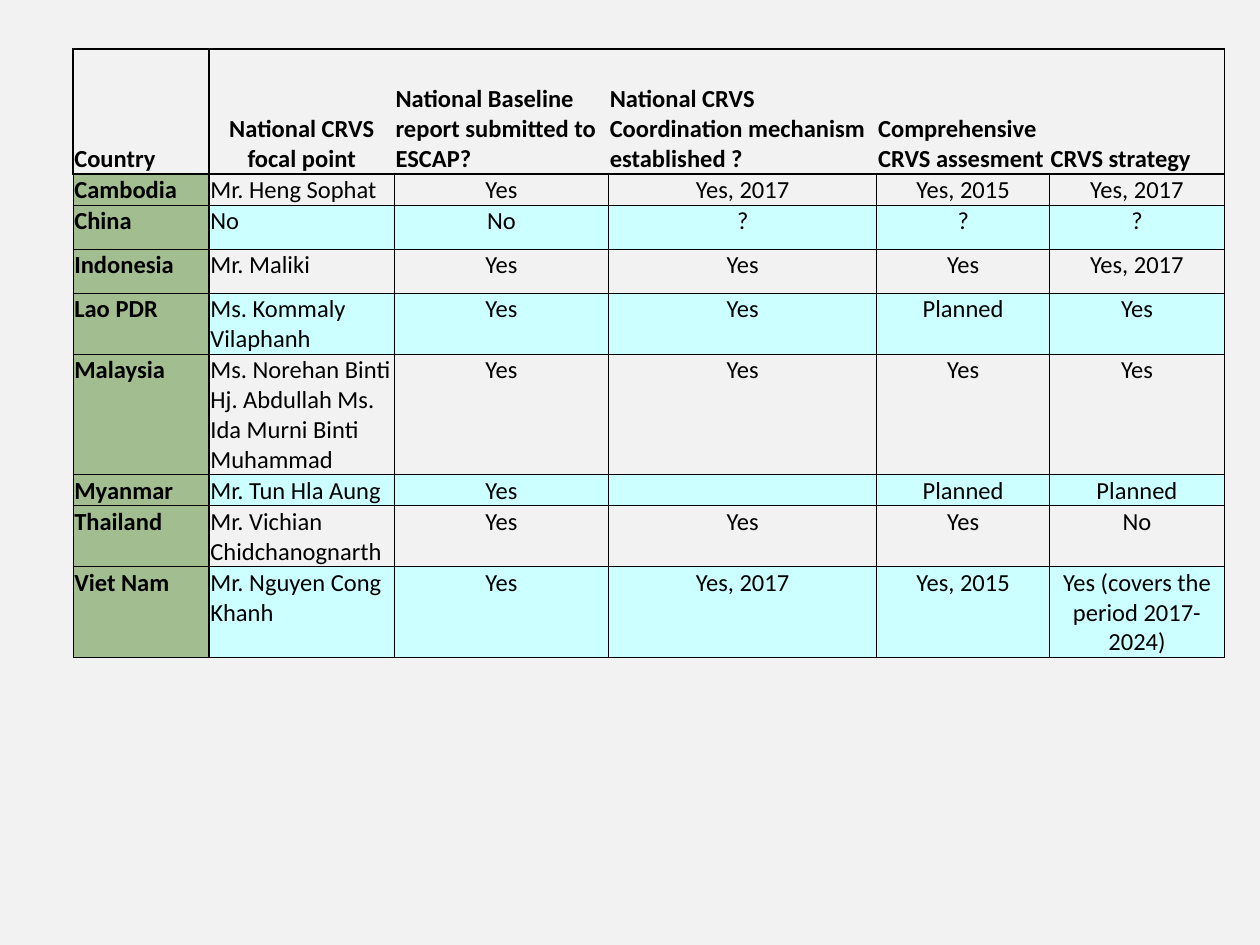
"""Build a slide with a table of CRVS progress by country."""
from lxml import etree
from pptx import Presentation
from pptx.dml.color import RGBColor
from pptx.enum.text import MSO_ANCHOR, PP_ALIGN
from pptx.oxml.ns import qn
from pptx.util import Inches, Pt

LEFT, CENTER = PP_ALIGN.LEFT, PP_ALIGN.CENTER
TOP, BOTTOM = MSO_ANCHOR.TOP, MSO_ANCHOR.BOTTOM
BLACK = RGBColor(0x00, 0x00, 0x00)
GREY = RGBColor(0xF2, 0xF2, 0xF2)
GREEN = RGBColor(0xA2, 0xBD, 0x90)
CYAN = RGBColor(0xCC, 0xFF, 0xFF)
FONT, SIZE = "Calibri", Pt(14)
THIN, THICK = Pt(0.5), Pt(1)

ROWS = [
    ("Country", "National CRVS focal point",
     "National Baseline report submitted to ESCAP?",
     "National CRVS Coordination mechanism established ?",
     "Comprehensive CRVS assesment", "CRVS strategy"),
    ("Cambodia", "Mr. Heng Sophat", "Yes", "Yes, 2017", "Yes, 2015", "Yes, 2017"),
    ("China", "No", "No", "?", "?", "?"),
    ("Indonesia", "Mr. Maliki", "Yes", "Yes", "Yes", "Yes, 2017"),
    ("Lao PDR", "Ms. Kommaly Vilaphanh", "Yes", "Yes", "Planned", "Yes"),
    ("Malaysia", "Ms. Norehan Binti Hj. Abdullah Ms. Ida Murni Binti Muhammad",
     "Yes", "Yes", "Yes", "Yes"),
    ("Myanmar", "Mr. Tun Hla Aung", "Yes", "", "Planned", "Planned"),
    ("Thailand", "Mr. Vichian Chidchanognarth", "Yes", "Yes", "Yes", "No"),
    ("Viet Nam", "Mr. Nguyen Cong Khanh", "Yes", "Yes, 2017", "Yes, 2015",
     "Yes (covers the period 2017-2024)"),
]
WIDTHS = [1.08, 1.47, 1.7, 2.13, 1.37, 1.39]
HEIGHTS = [0.99, 0.24, 0.35, 0.35, 0.48, 0.95, 0.24, 0.48, 0.71]
LAST = len(WIDTHS) - 1


def borders(row, col):
    """Return the line width for each side of a cell, None for no line."""
    if row == 0:
        return {"L": THICK if col < 2 else None,
                "R": THICK if col in (0, LAST) else None,
                "T": THICK, "B": THICK}
    return {"L": THICK if col == 1 else THIN,
            "R": THICK if col in (0, LAST) else THIN,
            "T": THICK if row == 1 else THIN, "B": THIN}


def draw_borders(cell, widths):
    tc_pr = cell._tc.get_or_add_tcPr()
    for side, width in widths.items():
        ln = etree.SubElement(tc_pr, qn(f"a:ln{side}"))
        if width is None:
            etree.SubElement(ln, qn("a:noFill"))
        else:
            ln.set("w", str(int(width)))
            fill = etree.SubElement(ln, qn("a:solidFill"))
            etree.SubElement(fill, qn("a:srgbClr"), val=str(BLACK))


def write_cell(cell, text, row, col):
    header = row == 0
    cell.margin_left = cell.margin_right = cell.margin_top = Inches(0.01)
    cell.margin_bottom = 0
    cell.vertical_anchor = BOTTOM if header else TOP
    cell.text_frame.text = text
    p = cell.text_frame.paragraphs[0]
    p.alignment = CENTER if (col == 1 if header else col > 1) else LEFT
    for r in p.runs:
        r.font.name, r.font.size = FONT, SIZE
        r.font.bold = header or col == 0
        r.font.color.rgb = BLACK
    if not text:
        etree.SubElement(p._p, qn("a:endParaRPr"), sz=str(SIZE.centipoints))
    draw_borders(cell, borders(row, col))
    color = None if header else GREEN if col == 0 else CYAN if row % 2 == 0 else None
    if color is None:
        cell.fill.background()
    else:
        cell.fill.solid()
        cell.fill.fore_color.rgb = color


def main():
    prs = Presentation()
    prs.slide_width, prs.slide_height = Inches(10), Inches(7.5)
    slide = prs.slides.add_slide(prs.slide_layouts[6])
    slide.background.fill.solid()
    slide.background.fill.fore_color.rgb = GREY

    table = slide.shapes.add_table(
        len(ROWS), len(WIDTHS), Inches(0.58), Inches(0.39),
        Inches(sum(WIDTHS)), Inches(sum(HEIGHTS))).table
    table.first_row = table.horz_banding = False
    for column, width in zip(table.columns, WIDTHS):
        column.width = Inches(width)
    for i, (values, height) in enumerate(zip(ROWS, HEIGHTS)):
        table.rows[i].height = Inches(height)
        for j, text in enumerate(values):
            write_cell(table.cell(i, j), text, i, j)
    prs.save("out.pptx")


if __name__ == "__main__":
    main()
